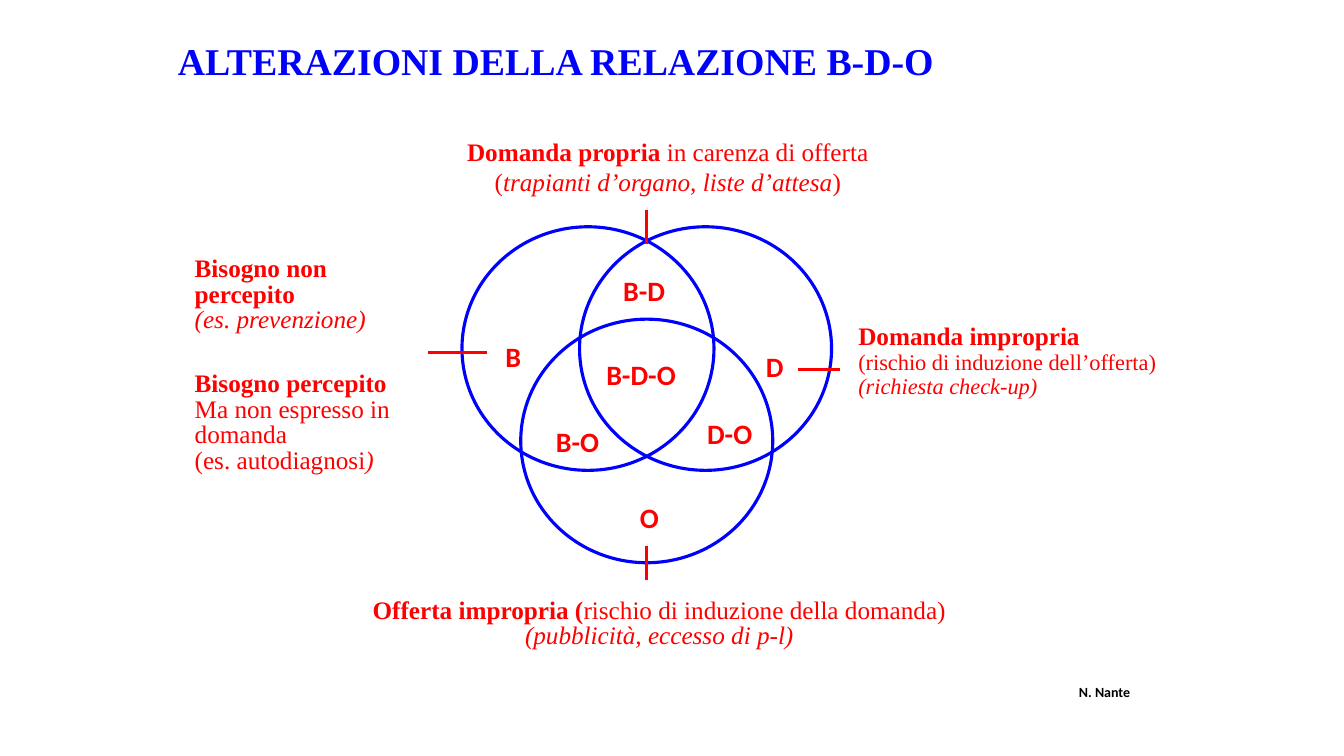
from lxml import etree
from pptx import Presentation
from pptx.dml.color import RGBColor
from pptx.enum.shapes import MSO_CONNECTOR as CONN, MSO_SHAPE as SHAPE
from pptx.enum.text import MSO_ANCHOR as ANCHOR, PP_ALIGN as ALIGN
from pptx.oxml.ns import qn
from pptx.util import Pt

COLORS = {"blue": "0000FF", "red": "FF0000", "black": "000000"}
SERIF, SANS = "Times New Roman", "Calibri"


def rgb(name):
    """Return the named colour."""
    return RGBColor.from_string(COLORS[name])


def add_text(s, box, paragraphs, font=SERIF, size=18, color="red", align=ALIGN.LEFT,
             spacing=None, anchor=ANCHOR.TOP, wrap=True, gaps=None):
    """Add a text box; each paragraph lists (text, style[, size]) runs."""
    tf = s.shapes.add_textbox(*map(Pt, box)).text_frame
    tf.word_wrap = wrap
    tf.vertical_anchor = anchor
    for i, runs in enumerate(paragraphs):
        p = tf.add_paragraph() if i else tf.paragraphs[0]
        p.alignment = align
        if spacing:
            p.line_spacing = spacing
        if gaps and i in gaps:
            p.space_before = Pt(gaps[i])
        for text, style, *own_size in runs:
            r = p.add_run()
            r.text = text
            r.font.name = font
            r.font.size = Pt(own_size[0] if own_size else size)
            r.font.bold = "b" in style
            r.font.italic = "i" in style
            r.font.color.rgb = rgb(color)


def add_circle(s, x, y, w, h):
    """Add an unfilled blue circle of the diagram."""
    sp = s.shapes.add_shape(SHAPE.OVAL, Pt(x), Pt(y), Pt(w), Pt(h))
    sp.shadow.inherit = False
    sp.fill.background()
    sp.line.color.rgb = rgb("blue")
    sp.line.width = Pt(2.25)


def add_tick(s, x1, y1, x2, y2):
    """Add a red line that ties a caption to the diagram."""
    line = s.shapes.add_connector(CONN.STRAIGHT, Pt(x1), Pt(y1), Pt(x2), Pt(y2))
    line.line.color.rgb = rgb("red")
    line.line.width = Pt(2.25)
    etree.SubElement(line._element.spPr, qn("a:effectLst"))


def add_title(s, box):
    """Add the slide title."""
    add_text(s, box, [[("ALTERAZIONI DELLA RELAZIONE B-D-O", "b")]], size=27,
             color="blue", spacing=0.9, anchor=ANCHOR.MIDDLE)


def add_venn(s, box):
    """Add the three circles, their labels and the ticks."""
    x, y, w, h = box
    cw, ch = 180, 174
    for dx, dy in ((0, 0), (w - cw, 0), ((w - cw) / 2, h - ch)):
        add_circle(s, x + dx, y + dy, cw, ch)
    labels = (("B", 24, 77, 42), ("D", 210, 84, 36), ("O", 120, 192, 42),
              ("B-O", 60, 138, 72), ("D-O", 168, 132, 66),
              ("B-D", 108, 30, 60), ("B-D-O", 96, 90, 90))
    for text, dx, dy, lw in labels:
        add_text(s, (x + dx, y + dy, lw, 31), [[(text, "b")]], font=SANS, size=20)
    mid = w / 2
    for x1, y1, x2, y2 in ((18, 90, -24, 90), (mid, 228, mid, 252),
                           (270, 102, 240, 102), (mid, -12, mid, 12)):
        add_tick(s, x + x1, y + y1, x + x2, y + y2)


def add_need(s, box):
    """Add the caption on need, left of the diagram."""
    add_text(s, box, [
        [("Bisogno non percepito", "b")],
        [("(es. prevenzione)", "i")],
        [("Bisogno percepito", "b")],
        [("Ma non espresso in domanda", "")],
        [("(es. autodiagnosi", ""), (")", "i")],
    ], spacing=0.85, gaps={2: 27})


def add_improper_demand(s, box):
    """Add the caption on improper demand, right of the diagram."""
    add_text(s, box, [
        [("Domanda impropria", "b")],
        [("(rischio di induzione dell’offerta)", "", 16)],
        [("(richiesta check-up)", "i", 16)],
    ], spacing=0.9)


def add_improper_supply(s, box):
    """Add the caption on improper supply, below the diagram."""
    add_text(s, box, [[
        ("Offerta impropria (", "b"),
        ("rischio di induzione della domanda) ", ""),
        ("(pubblicità, eccesso di p-l)", "i"),
    ]], align=ALIGN.CENTER, spacing=0.85)


def add_proper_demand(s, box):
    """Add the caption on proper demand, above the diagram."""
    add_text(s, box, [
        [("Domanda propria", "b"), (" in carenza di offerta", "")],
        [("(", ""), ("trapianti d’organo, liste d’attesa", "i"), (")", "")],
    ], align=ALIGN.CENTER)


def add_author(s, box):
    """Add the author's name."""
    add_text(s, box, [[("N. Nante", "b")]], font=SANS, size=10, color="black",
             align=ALIGN.CENTER, wrap=False)


def main():
    """Build and save the slide."""
    prs = Presentation()
    prs.slide_width, prs.slide_height = Pt(960), Pt(540)
    s = prs.slides.add_slide(prs.slide_layouts[6])
    add_title(s, (120, 18, 720, 54))
    add_venn(s, (330, 162, 264, 240))
    add_need(s, (132, 180, 174, 165))
    add_improper_demand(s, (606, 228, 246, 61))
    add_improper_supply(s, (222, 424, 498, 44))
    add_proper_demand(s, (288, 94, 378, 50))
    add_author(s, (763, 485, 52, 19))
    prs.save("out.pptx")


if __name__ == "__main__":
    main()
